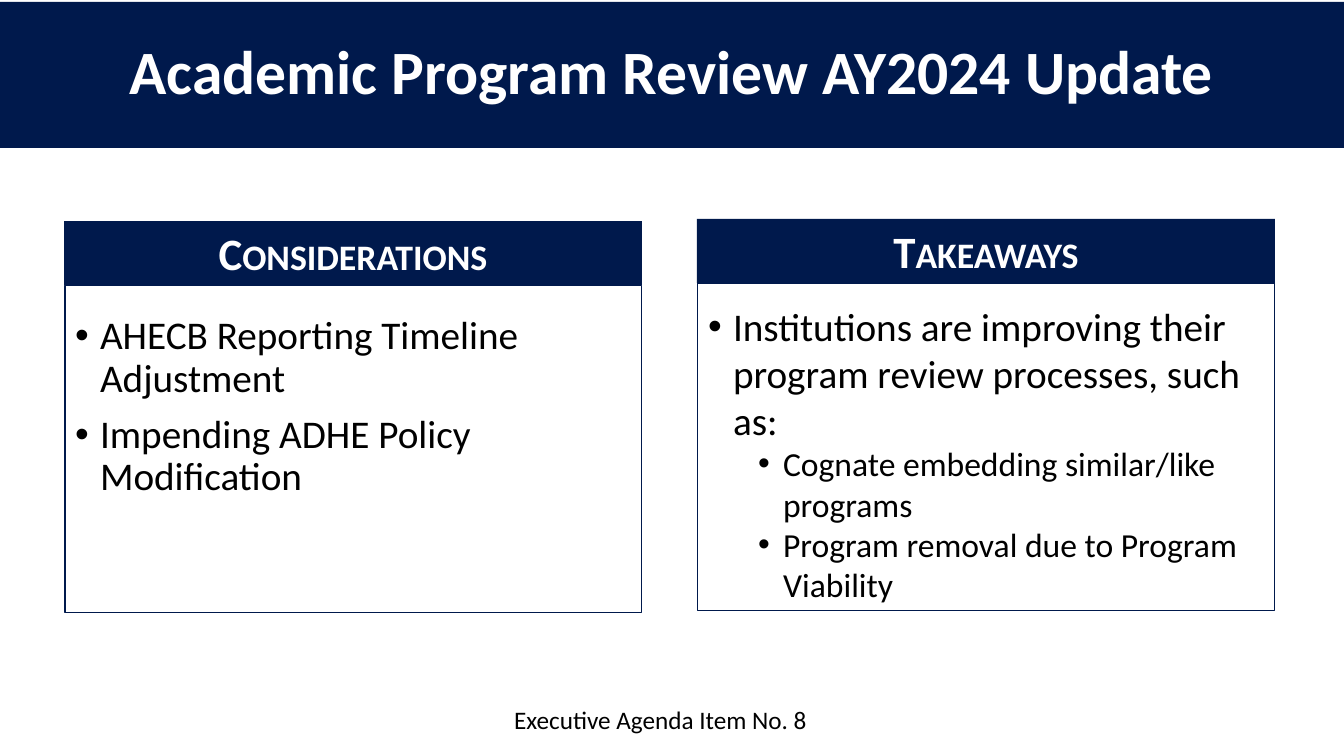
from lxml import etree
from pptx import Presentation
from pptx.dml.color import RGBColor
from pptx.enum.shapes import MSO_SHAPE
from pptx.enum.text import MSO_ANCHOR, MSO_AUTO_SIZE, PP_ALIGN
from pptx.oxml.ns import qn
from pptx.util import Emu, Pt

RECT = MSO_SHAPE.RECTANGLE
MIDDLE, TOP = MSO_ANCHOR.MIDDLE, MSO_ANCHOR.TOP
CENTER, LEFT = PP_ALIGN.CENTER, PP_ALIGN.LEFT
FIXED = MSO_AUTO_SIZE.NONE
SCALE = 914400 / 100.8
NAVY, WHITE, BLACK = "00194C", "FFFFFF", "000000"


def px(n):
    return Emu(round(n * SCALE))


def color(code):
    return RGBColor.from_string(code)


def write(para, text, size=28, ink=BLACK, bold=False, align=LEFT,
          small=False, pitch=1.0, before=0):
    para.alignment = align
    para.line_spacing = pitch
    para.space_before, para.space_after = Pt(before), Pt(0)
    run = para.add_run()
    run.text = text
    font = run.font
    font.name, font.size, font.bold = "Calibri", Pt(size), bold
    font.color.rgb = color(ink)
    if small:
        run._r.get_or_add_rPr().set("cap", "small")


def bullet(para, indent):
    props = para._p.get_or_add_pPr()
    props.set("marL", str(px(indent)))
    props.set("indent", str(-px(25)))
    etree.SubElement(props, qn("a:buFont")).set("typeface", "Arial")
    etree.SubElement(props, qn("a:buChar")).set("char", "•")


class Deck:
    def __init__(self):
        self.prs = Presentation()
        self.prs.slide_width, self.prs.slide_height = px(1344), px(756)
        self.slide = self.prs.slides.add_slide(self.prs.slide_layouts[3])

    def place(self, shape, box, anchor=MIDDLE):
        shape.left, shape.top, shape.width, shape.height = map(px, box)
        frame = shape.text_frame
        frame.word_wrap = True
        frame.auto_size = FIXED
        frame.vertical_anchor = anchor
        return frame

    def paint(self, shape):
        shape.fill.solid()
        shape.fill.fore_color.rgb = color(NAVY)
        shape.line.fill.background()

    def title(self, text, box):
        shape = self.slide.shapes.title
        frame = self.place(shape, box)
        self.paint(shape)
        write(frame.paragraphs[0], text, size=44, ink=WHITE, bold=True,
              align=CENTER, pitch=0.9)

    def header(self, text, box):
        shape = self.slide.shapes.add_shape(RECT, *map(px, box))
        shape.shadow.inherit = False
        self.paint(shape)
        write(self.place(shape, box).paragraphs[0], text, size=32,
              ink=WHITE, bold=True, align=CENTER, small=True)

    def bullets(self, slot, items, box, inset, pitch, gap):
        shape = self.slide.placeholders[slot]
        frame = self.place(shape, box, TOP)
        frame.margin_top = px(inset)
        shape.line.color.rgb = color(NAVY)
        shape.line.width = Pt(0.75)
        for i, (level, text) in enumerate(items):
            para = frame.add_paragraph() if i else frame.paragraphs[0]
            para.level = level
            write(para, text, size=28 - 4 * level, pitch=pitch,
                  before=gap if i else 0)
            bullet(para, 25 + 50 * level)

    def label(self, text, box):
        shape = self.slide.shapes.add_textbox(*map(px, box))
        write(self.place(shape, box, TOP).paragraphs[0], text, size=18,
              align=CENTER)


def main():
    deck = Deck()
    deck.title("Academic Program Review AY2024 Update", (0, 2, 1344, 146))

    # Columns: slot, left, top, heading, top inset, line pitch, gap, items
    columns = [
        (1, 64, 221, "Considerations", 31, 0.9, 10, [
            (0, "AHECB Reporting Timeline Adjustment"),
            (0, "Impending ADHE Policy Modification")]),
        (2, 697, 219, "Takeaways", 19, 1.0, 0, [
            (0, "Institutions are improving their program review "
                "processes, such as:"),
            (1, "Cognate embedding similar/like programs"),
            (1, "Program removal due to Program Viability")]),
    ]
    for slot, left, top, head, inset, pitch, gap, items in columns:
        deck.bullets(slot, items, (left + 1, top + 64, 577, 328),
                     inset, pitch, gap)
        deck.header(head, (left, top, 578, 64))

    # Agenda reference
    deck.label("Executive Agenda Item No. 8", (446, 699, 429, 40))
    deck.prs.save("out.pptx")


if __name__ == "__main__":
    main()
